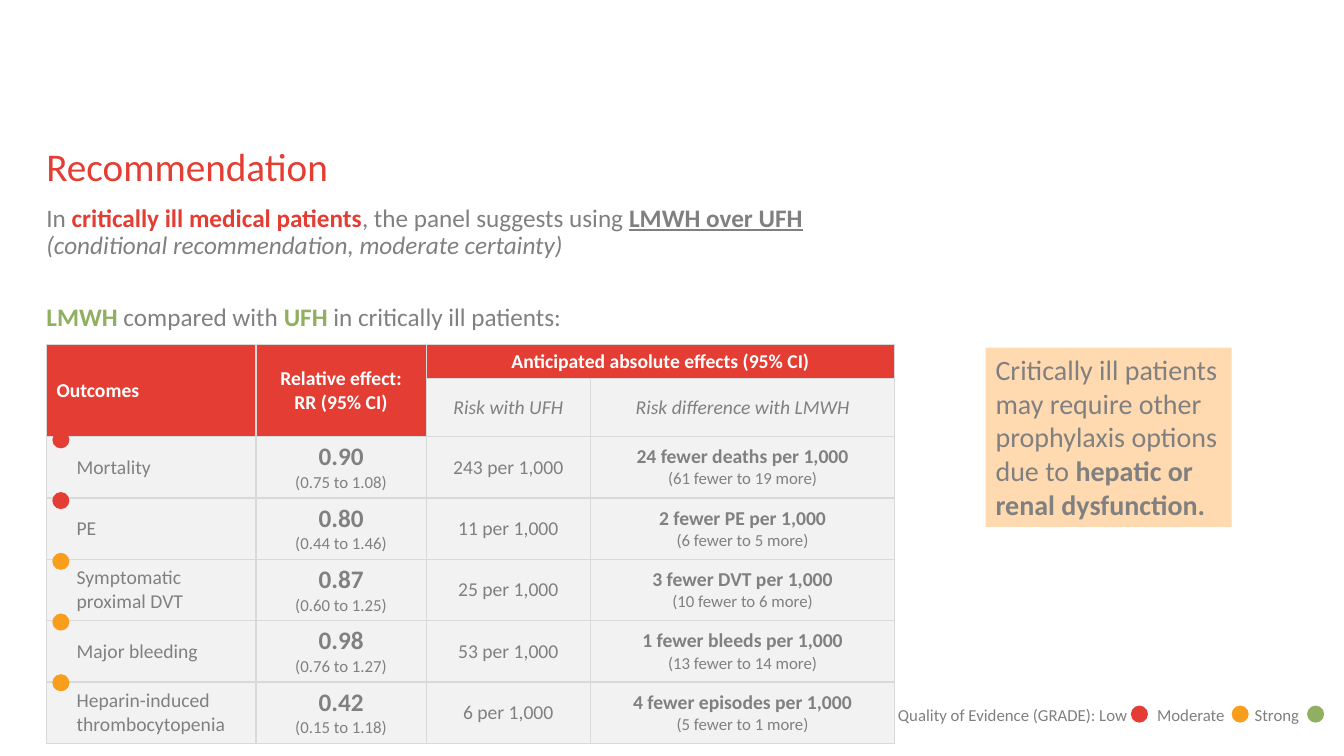
from dataclasses import dataclass
from typing import NamedTuple, Optional

from lxml.etree import SubElement
from pptx import Presentation
from pptx.dml.color import RGBColor
from pptx.enum.shapes import MSO_SHAPE as Shape
from pptx.enum.text import MSO_ANCHOR as Anchor, MSO_AUTO_SIZE as AutoSize, PP_ALIGN as Align
from pptx.oxml.ns import qn
from pptx.util import Cm, Pt


@dataclass(frozen=True)
class Theme:
    font: str = "Calibri"
    red: str = "E43D33"
    amber: str = "F99D1C"
    green: str = "91AF60"
    grey: str = "808080"
    white: str = "FFFFFF"
    cell: str = "F2F2F2"
    border: str = "D9D9D9"
    note: str = "FFD9B0"
    title_size: int = 28
    note_size: int = 20
    body_size: int = 18
    table_size: int = 14
    small_size: int = 12


T = Theme()


class Run(NamedTuple):
    text: str
    size: int = T.body_size
    color: str = T.grey
    bold: bool = False
    italic: bool = False
    underline: bool = False


class Para(NamedTuple):
    runs: list[Run]
    before: int = 0
    line: Optional[float] = None


class Box(NamedTuple):
    left: float
    top: float
    width: float
    height: float


class Outcome(NamedTuple):
    name: str
    certainty: str
    ratio: str
    ratio_ci: str
    baseline: str
    difference: str
    difference_ci: str


class LegendDot(NamedTuple):
    left: float
    color: str


OUTCOMES = [
    Outcome("Mortality", T.red, "0.90", "(0.75 to 1.08)", "243 per 1,000",
            "24 fewer deaths per 1,000", "(61 fewer to 19 more)"),
    Outcome("PE", T.red, "0.80", "(0.44 to 1.46)", "11 per 1,000",
            "2 fewer PE per 1,000", "(6 fewer to 5 more)"),
    Outcome("Symptomatic proximal DVT", T.amber, "0.87", "(0.60 to 1.25)", "25 per 1,000",
            "3 fewer DVT per 1,000", "(10 fewer to 6 more)"),
    Outcome("Major bleeding", T.amber, "0.98", "(0.76 to 1.27)", "53 per 1,000",
            "1 fewer bleeds per 1,000", "(13 fewer to 14 more)"),
    Outcome("Heparin-induced thrombocytopenia", T.amber, "0.42", "(0.15 to 1.18)", "6 per 1,000",
            "4 fewer episodes per 1,000", "(5 fewer to 1 more)"),
]
LEGEND = [LegendDot(28.5, T.red), LegendDot(31.04, T.amber), LegendDot(32.94, T.green)]
LEGEND_TABS = [6.53, 8.99]
COLUMNS = [5.28, 4.29, 4.14, 7.67]
ROWS = [0.74, 0.81, 1.32] + [1.3] * 4
DOT_SIZE = 0.43


def rgb(color: str) -> RGBColor:
    return RGBColor.from_string(color)


def write(tf, paras: list[Para], align: Align = Align.LEFT) -> None:
    for i, para in enumerate(paras):
        p = tf.paragraphs[0] if i == 0 else tf.add_paragraph()
        p.alignment = align
        p.space_before = Pt(para.before)
        if para.line:
            p.line_spacing = para.line
        for run in para.runs:
            r = p.add_run()
            r.text = run.text
            font = r.font
            font.name, font.size = T.font, Pt(run.size)
            font.bold, font.italic, font.underline = run.bold, run.italic, run.underline
            font.color.rgb = rgb(run.color)


def add_text(slide, box: Box, paras: list[Para], inset: bool = True):
    tf = slide.shapes.add_textbox(*map(Cm, box)).text_frame
    tf.word_wrap = True
    if not inset:
        tf.margin_left = tf.margin_top = tf.margin_right = tf.margin_bottom = 0
    write(tf, paras)
    return tf


def add_filled(slide, kind: Shape, box: Box, color: str):
    sp = slide.shapes.add_shape(kind, *map(Cm, box))
    sp.shadow.inherit = False
    sp.fill.solid()
    sp.fill.fore_color.rgb = rgb(color)
    sp.line.fill.background()
    return sp


def add_dot(slide, left: float, top: float, color: str) -> None:
    add_filled(slide, Shape.OVAL, Box(left, top, DOT_SIZE, DOT_SIZE), color)


def style_cell(cell, color: str) -> None:
    """Give the cell thin borders and a fill; the borders must come first in the XML."""
    tc_pr = cell._tc.get_or_add_tcPr()
    for side in ("lnL", "lnR", "lnT", "lnB"):
        line = SubElement(tc_pr, qn(f"a:{side}"), w=str(Pt(1)))
        SubElement(SubElement(line, qn("a:solidFill")), qn("a:srgbClr"), val=T.border)
    cell.fill.solid()
    cell.fill.fore_color.rgb = rgb(color)
    cell.vertical_anchor = Anchor.MIDDLE


def fill_cell(cell, runs: list[Run], align: Align = Align.CENTER) -> None:
    """Write each run as its own paragraph."""
    write(cell.text_frame, [Para([run]) for run in runs], align)


def add_outcome_table(slide) -> None:
    frame = slide.shapes.add_table(len(ROWS), len(COLUMNS), Cm(1.17), Cm(8.69), Cm(21.38), Cm(9.32))
    table = frame.table
    table.first_row = table.horz_banding = False
    for column, width in zip(table.columns, COLUMNS):
        column.width = Cm(width)
    for row, height in zip(table.rows, ROWS):
        row.height = Cm(height)
    frame.height = Cm(9.32)
    for i in range(len(ROWS)):
        for j in range(len(COLUMNS)):
            style_cell(table.cell(i, j), T.red if i == 0 or (i == 1 and j < 2) else T.cell)
    for j in (0, 1):
        table.cell(0, j).merge(table.cell(1, j))
    table.cell(0, 2).merge(table.cell(0, 3))

    headers = [["Outcomes"], ["Relative effect:", "RR (95% CI)"], ["Anticipated absolute effects (95% CI)"]]
    for j, lines in enumerate(headers):
        fill_cell(table.cell(0, j), [Run(line, T.table_size, T.white, bold=True) for line in lines],
                  Align.CENTER if j else Align.LEFT)
    for j, text in enumerate(["Risk with UFH", "Risk difference with LMWH"], start=2):
        fill_cell(table.cell(1, j), [Run(text, T.table_size, italic=True)])
    for i, o in enumerate(OUTCOMES, start=2):
        name, ratio, baseline, difference = (table.cell(i, j) for j in range(len(COLUMNS)))
        name.margin_left = Cm(0.76)
        fill_cell(name, [Run(o.name, T.table_size)], Align.LEFT)
        fill_cell(ratio, [Run(o.ratio, T.body_size, bold=True), Run(o.ratio_ci, T.small_size)])
        fill_cell(baseline, [Run(o.baseline, T.table_size)])
        fill_cell(difference, [Run(o.difference, T.table_size, bold=True), Run(o.difference_ci, T.small_size)])


def add_note(slide) -> None:
    sp = add_filled(slide, Shape.RECTANGLE, Box(24.84, 8.76, 6.2, 4.52), T.note)
    tf = sp.text_frame
    tf.word_wrap = True
    tf.auto_size = AutoSize.SHAPE_TO_FIT_TEXT
    tf.vertical_anchor = Anchor.TOP
    write(tf, [Para([
        Run("Critically ill patients may require other prophylaxis options due to ", T.note_size),
        Run("hepatic or renal dysfunction.", T.note_size, bold=True)])])


def add_legend(slide) -> None:
    tf = add_text(slide, Box(22.38, 17.63, 11.51, 0.76),
                  [Para([Run("Quality of Evidence (GRADE): Low\tModerate\tStrong", T.small_size)])])
    tabs = SubElement(tf.paragraphs[0]._p.get_or_add_pPr(), qn("a:tabLst"))
    for position in LEGEND_TABS:
        SubElement(tabs, qn("a:tab"), pos=str(Cm(position)), algn="l")
    for dot in LEGEND:
        add_dot(slide, dot.left, 17.78, dot.color)


def main() -> None:
    prs = Presentation()
    prs.slide_width, prs.slide_height = Cm(33.87), Cm(19.05)
    slide = prs.slides.add_slide(prs.slide_layouts[6])
    add_outcome_table(slide)
    add_note(slide)
    add_text(slide, Box(1.17, 3.73, 30.48, 1.17),
             [Para([Run("Recommendation", T.title_size, T.red)], line=0.9)], inset=False)
    add_text(slide, Box(1.17, 5.18, 30.48, 3.12), [
        Para([Run("In "), Run("critically ill medical patients", color=T.red, bold=True),
              Run(", the panel suggests using "), Run("LMWH over UFH", bold=True, underline=True)], line=0.9),
        Para([Run("(conditional recommendation, moderate certainty)", italic=True)], line=0.9),
        Para([Run("LMWH ", color=T.green, bold=True), Run("compared with "),
              Run("UFH ", color=T.green, bold=True), Run("in critically ill patients:")], before=32, line=0.9),
    ], inset=False)
    add_legend(slide)
    for i, outcome in enumerate(OUTCOMES):
        add_dot(slide, 1.32, 10.87 + 1.53 * i, outcome.certainty)
    prs.save("out.pptx")


if __name__ == "__main__":
    main()
